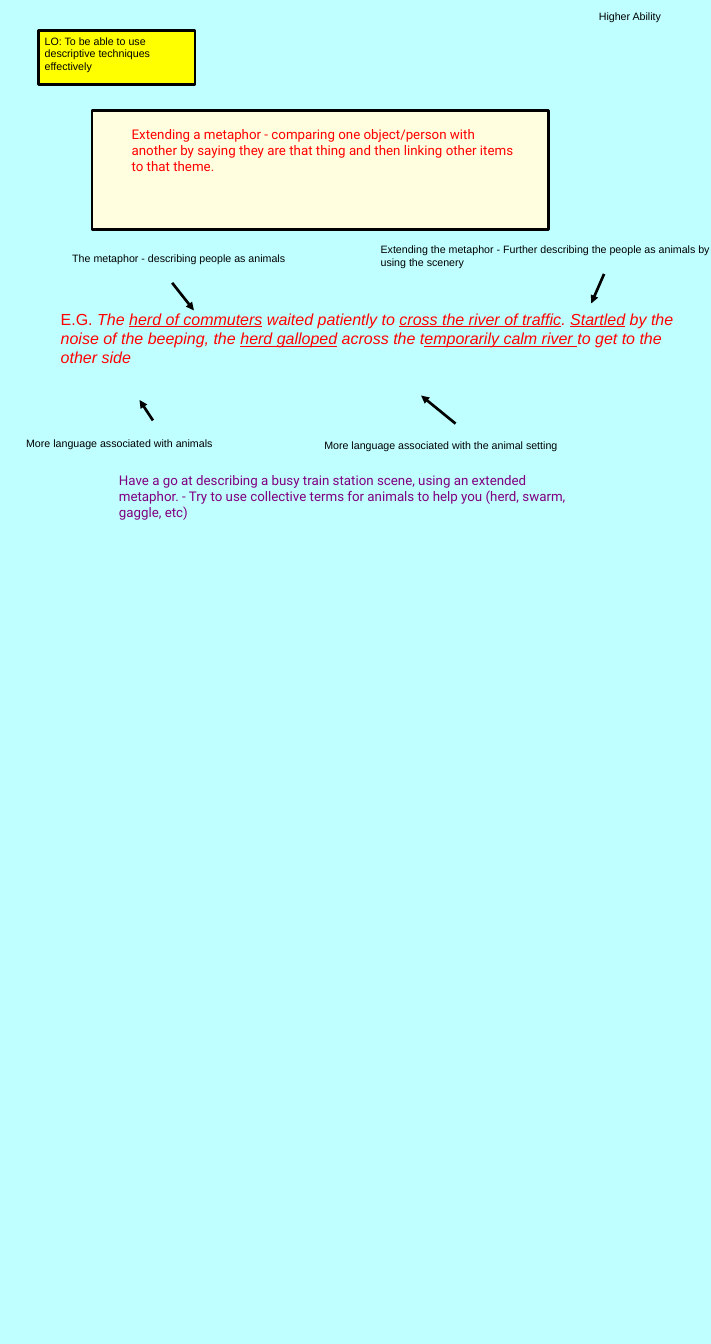
"""Build a lesson slide on extending a metaphor."""
from lxml import etree
from pptx import Presentation
from pptx.dml.color import RGBColor
from pptx.enum.shapes import MSO_CONNECTOR, MSO_SHAPE
from pptx.oxml.ns import qn
from pptx.util import Pt

RECT = MSO_SHAPE.RECTANGLE
LINE = MSO_CONNECTOR.STRAIGHT
AQUA = RGBColor(0xC0, 0xFF, 0xFF)
YELLOW = RGBColor(0xFF, 0xFF, 0x00)
CREAM = RGBColor(0xFF, 0xFF, 0xE0)
BLACK = RGBColor(0x00, 0x00, 0x00)
RED = RGBColor(0xFF, 0x00, 0x00)
PURPLE = RGBColor(0x80, 0x00, 0x80)

SMALL = ("Arial", 12, BLACK)
RULE = ("Roboto", 15, RED)
TASK = ("Roboto", 15, PURPLE)
SAMPLE = ("Arial", 18, RED)

PANELS = [
    ((43.5, 34, 176, 61), YELLOW),
    ((103.7, 124.5, 513.5, 134), CREAM),
]
TEXTS = [
    ((43.2, 35.3, 178, 51), SMALL,
     "LO: To be able to use descriptive techniques effectively"),
    ((141, 138.2, 448, 80), RULE,
     "Extending a metaphor - comparing one object/person with another by saying "
     "they are that thing and then linking other items to that theme."),
    ((74.2, 279.4, 340, 21.6), SMALL,
     "The metaphor - describing people as animals"),
    ((421.2, 270, 408.2, 36), SMALL,
     "Extending the metaphor - Further describing the people as animals by "
     "using the scenery"),
    ((22.3, 488.2, 300, 21.6), SMALL, "More language associated with animals"),
    ((357.8, 490.3, 356, 21.6), SMALL,
     "More language associated with the animal setting"),
    ((126.7, 527.8, 538, 62), TASK,
     "Have a go at describing a busy train station scene, using an extended "
     "metaphor. - Try to use collective terms for animals to help you (herd, "
     "swarm, gaggle, etc)"),
    ((666.7, 7.9, 118, 21.6), SMALL, "Higher Ability"),
]
PLACE = (61.2, 344.2, 710, 72.7)
LEAD = "E.G. "
STORY = [
    ("The ", False),
    ("herd of commuters", True),
    (" waited patiently to ", False),
    ("cross the river of traffic", True),
    (". ", False),
    ("Startled", True),
    (" by the noise of the beeping, the ", False),
    ("herd galloped", True),
    (" across the t", False),
    ("emporarily calm river ", True),
    ("to get to the other side", False),
]
ARROWS = [
    (193.7, 318.2, 218.2, 349.2),
    (679.7, 308.2, 665.3, 341.3),
    (172.1, 473, 157, 450),
    (512.6, 476.6, 473.8, 445),
]


def points(nums):
    return [Pt(num) for num in nums]


def add_panel(slide, place, fill):
    panel = slide.shapes.add_shape(RECT, *points(place))
    panel.shadow.inherit = False
    panel.fill.solid()
    panel.fill.fore_color.rgb = fill
    panel.line.color.rgb = BLACK
    panel.line.width = Pt(3)


def add_text(slide, place, style, text):
    frame = slide.shapes.add_textbox(*points(place)).text_frame
    frame.word_wrap = True
    para = frame.paragraphs[0]
    para.add_run().text = text
    face, size, color = style
    para.font.name = face
    para.font.size = Pt(size)
    para.font.color.rgb = color
    return para


def add_arrow(slide, ends):
    arrow = slide.shapes.add_connector(LINE, *points(ends))
    arrow.line.color.rgb = BLACK
    arrow.line.width = Pt(3)
    props = arrow.line._get_or_add_ln()
    etree.SubElement(props, qn("a:tailEnd"), type="triangle")
    etree.SubElement(props.getparent(), qn("a:effectLst"))


def main():
    deck = Presentation()
    deck.slide_width, deck.slide_height = Pt(800), Pt(1512)
    slide = deck.slides.add_slide(deck.slide_layouts[6])
    back = slide.background.fill
    back.solid()
    back.fore_color.rgb = AQUA

    for place, fill in PANELS:
        add_panel(slide, place, fill)
    for place, style, text in TEXTS:
        add_text(slide, place, style, text)

    para = add_text(slide, PLACE, SAMPLE, LEAD)
    for text, marked in STORY:
        run = para.add_run()
        run.text = text
        run.font.italic = True
        run.font.underline = marked

    for ends in ARROWS:
        add_arrow(slide, ends)
    deck.save("out.pptx")


if __name__ == "__main__":
    main()
